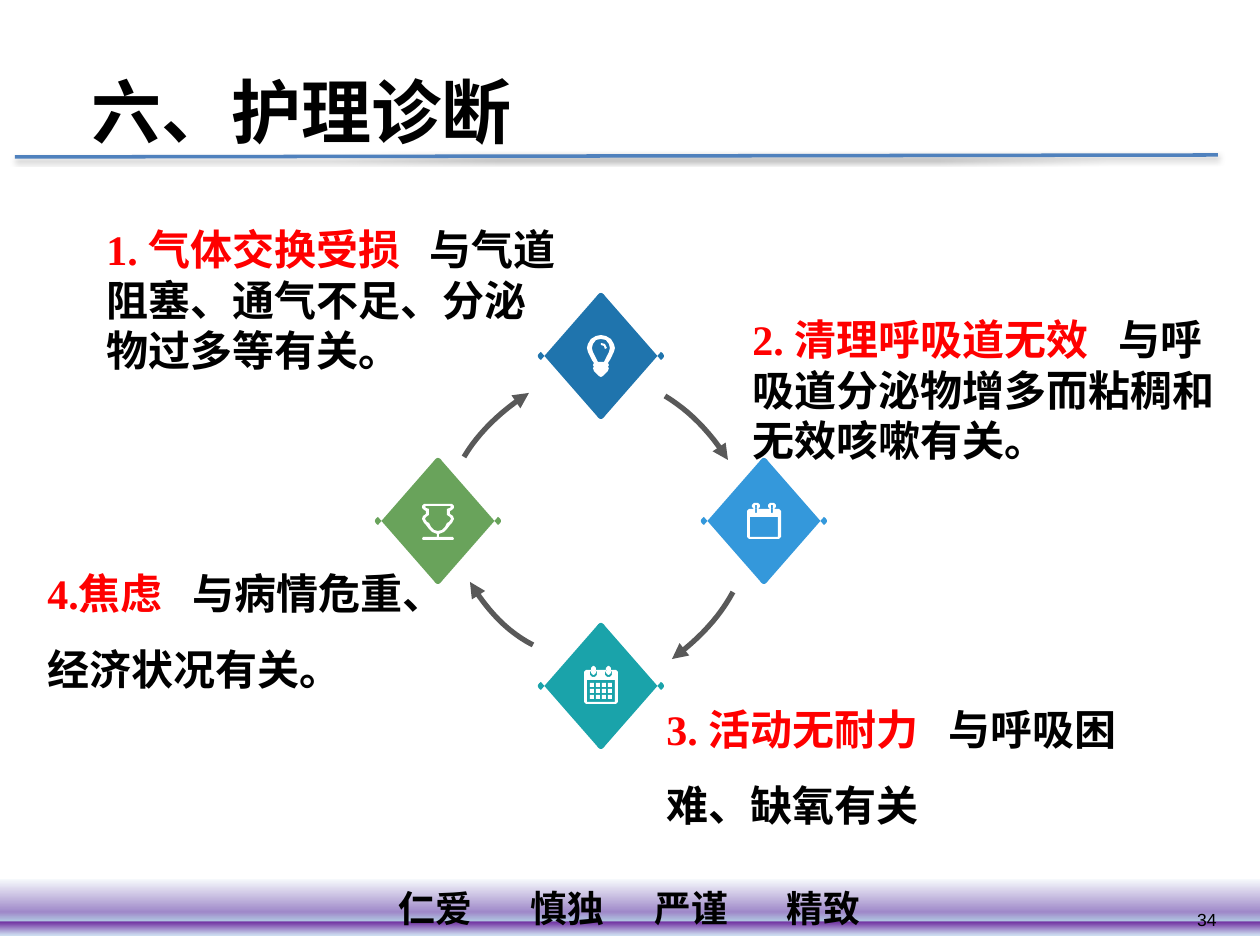
"""Build the nursing diagnosis slide: a four-step cycle with notes around it."""
from dataclasses import dataclass

from lxml.etree import SubElement
from pptx import Presentation
from pptx.dml.color import RGBColor
from pptx.enum.shapes import MSO_CONNECTOR as Connector, MSO_SHAPE as Preset
from pptx.enum.text import MSO_ANCHOR as Anchor, PP_ALIGN as Align
from pptx.oxml.ns import qn
from pptx.util import Emu, Pt

SCALE = 914400 / 126
BLACK = RGBColor(0x00, 0x00, 0x00)
WHITE = RGBColor(0xFF, 0xFF, 0xFF)
RED = RGBColor(0xFF, 0x00, 0x00)
GRAY = RGBColor(0x59, 0x59, 0x59)
RULE_BLUE = RGBColor(0x4F, 0x81, 0xBD)
NAVY = RGBColor(0x1F, 0x74, 0xAD)
SKY = RGBColor(0x34, 0x98, 0xDB)
TEAL = RGBColor(0x1A, 0xA3, 0xAA)
GREEN = RGBColor(0x69, 0xA3, 0x5B)
SERIF, CJK, SANS = "Times New Roman", "Noto Sans CJK SC", "Arial"
BAND_STOPS = [
    (0, "F6F9FC"), (58, "9F89C9"), (74, "B0C6E1"), (75, "7030A0"), (93, "B7B5DE"),
    (96, "C3CBE8"), (98, "C9D6ED"), (99, "CDDFF1"), (99, "CCDCF0"), (100, "CAD9EB"),
]
Point = tuple[float, float]
Contour = list[Point]


@dataclass
class Step:
    center: Point
    color: RGBColor
    icon: list[Contour]


@dataclass
class Note:
    box: tuple[int, int, int, int]
    name: str
    cause: str
    tab: int
    leading: float


def px(value: float) -> Emu:
    """Turn pixels into EMU."""
    return Emu(round(value * SCALE))


def curve(start: Point, control: Point, end: Point, count: int = 12) -> Contour:
    """Sample a quadratic curve."""
    steps = [i / count for i in range(count + 1)]
    return [tuple((1 - t) ** 2 * a + 2 * t * (1 - t) * b + t * t * c
                  for a, b, c in zip(start, control, end)) for t in steps]


def block(left: int, top: int, right: int, bottom: int, cut: int = 0) -> Contour:
    """Outline a rectangle with its corners cut."""
    return [(left + cut, top), (right - cut, top), (right, top + cut), (right, bottom - cut),
            (right - cut, bottom), (left + cut, bottom), (left, bottom - cut), (left, top + cut)]


def mirrored(half: Contour) -> Contour:
    """Complete a right half by its reflection."""
    return half + [(-x, y) for x, y in reversed(half)]


def diamond() -> Contour:
    """Outline a diamond with rounded tips."""
    return [point for x, y in [(0, 1), (1, 0), (0, -1), (-1, 0)]
            for point in curve((60 * x - 4 * y, 60 * y - 4 * x), (66 * x, 66 * y),
                               (60 * x + 4 * y, 60 * y + 4 * x))]


def draw_outline(slide, contours: list[Contour], center: Point = (0, 0), closed: bool = True):
    """Draw contours placed around a centre as one freeform."""
    placed = [[(px(x + center[0]), px(y + center[1])) for x, y in contour]
              for contour in contours]
    builder = slide.shapes.build_freeform(*placed[0][0], scale=1.0)
    for index, contour in enumerate(placed):
        if index:
            builder.move_to(*contour[0])
        builder.add_line_segments(contour[1:], close=closed)
    shape = builder.convert_to_shape()
    shape.shadow.inherit = False
    return shape


def draw_filled(slide, contours: list[Contour], center: Point, color: RGBColor) -> None:
    """Draw a filled freeform without a border."""
    shape = draw_outline(slide, contours, center)
    shape.fill.solid()
    shape.fill.fore_color.rgb = color
    shape.line.fill.background()


def draw_arrow(slide, tip: Point, middle: Point, end: Point) -> None:
    """Draw a curved arrow passing through its middle point."""
    control = tuple(2 * m - (a + b) / 2 for a, m, b in zip(tip, middle, end))
    shape = draw_outline(slide, [curve(tip, control, end)], closed=False)
    shape.fill.background()
    shape.line.color.rgb = GRAY
    shape.line.width = Pt(3)
    SubElement(shape.line._get_or_add_ln(), qn("a:headEnd"), type="triangle")


def add_tabs(para, stops: list[int]) -> None:
    """Add left tab stops to a paragraph."""
    tabs = SubElement(para._p.get_or_add_pPr(), qn("a:tabLst"))
    for stop in stops:
        SubElement(tabs, qn("a:tab"), pos=str(px(stop)), algn="l")


def add_span(para, text: str, **values) -> None:
    """Add a run with the given font values."""
    span = para.add_run()
    span.text = text
    span.font.color.rgb = values.pop("color", BLACK)
    for name, value in values.items():
        setattr(span.font, name, value)
    if values["name"] != SANS:
        SubElement(span._r.get_or_add_rPr(), qn("a:ea"), typeface=CJK)


def add_box(slide, area: tuple[int, int, int, int], **values):
    """Add a wrapping text box and return its frame."""
    frame = slide.shapes.add_textbox(*map(px, area)).text_frame
    for name, value in {"word_wrap": True, **values}.items():
        setattr(frame, name, value)
    return frame


def draw_band(slide) -> None:
    """Draw the gradient footer with its four mottoes."""
    band = slide.shapes.add_shape(Preset.RECTANGLE, 0, px(879), px(1260), px(57))
    band.shadow.inherit = False
    band.line.fill.background()
    band.fill.gradient()
    band.fill.gradient_angle = 270
    stops = band._element.spPr.find(".//" + qn("a:gsLst"))
    stops.clear()
    for position, color in BAND_STOPS:
        stop = SubElement(stops, qn("a:gs"), pos=str(position * 1000))
        SubElement(stop, qn("a:srgbClr"), val=color)
    frame = band.text_frame
    for name, value in {"margin_left": px(399), "margin_right": 0, "margin_top": 0,
                        "margin_bottom": 0, "vertical_anchor": Anchor.MIDDLE}.items():
        setattr(frame, name, value)
    para = frame.paragraphs[0]
    para.alignment = Align.LEFT
    add_tabs(para, [132, 256, 388])
    add_span(para, "仁爱\t慎独\t严谨\t精致", name=CJK, size=Pt(21), bold=True)


def draw_rule(slide) -> None:
    """Draw the shadowed line under the title."""
    rule = slide.shapes.add_connector(Connector.STRAIGHT, px(15), px(157), px(1218), px(155))
    rule.line.color.rgb = RULE_BLUE
    rule.line.width = Pt(2)
    effects = SubElement(rule._element.spPr, qn("a:effectLst"))
    shadow = SubElement(effects, qn("a:outerShdw"), blurRad=str(Pt(3.1)), dist=str(Pt(1.6)),
                        dir="5400000", rotWithShape="0")
    color = SubElement(shadow, qn("a:srgbClr"), val="000000")
    SubElement(color, qn("a:alpha"), val="38000")


def draw_note(slide, note: Note) -> None:
    """Write a diagnosis in red followed by its cause."""
    para = add_box(slide, note.box, margin_top=px(10)).paragraphs[0]
    add_tabs(para, [note.tab])
    para.line_spacing = Pt(note.leading)
    add_span(para, note.name, name=SERIF, size=Pt(24), bold=True, color=RED)
    add_span(para, "\t" + note.cause, name=SERIF, size=Pt(24), bold=True)


BULB = [
    mirrored([(0, -21), (5, -20), (10, -17), (13, -12), (14, -8), (13, -4), (11, 0), (9, 4),
              (7, 7), (8, 9), (7, 11), (8, 12), (7, 15), (4, 18), (2, 20), (0, 21)]),
    mirrored([(0, -17), (5, -16), (8, -12), (9, -8), (8, -4), (6, 0), (4, 4), (3, 6)]),
    [(0, -13), (4, -12), (6, -8), (4, -7), (3, -10), (0, -11)],
]
CUP = [
    mirrored([(0, -17), (14, -17), (16, -15), (16, -13), (14, -11), (12, -10), (12, -7),
              (15, -5), (16, -2), (14, 2), (12, 4), (9, 8), (6, 11), (1, 13), (1, 16),
              (15, 16), (16, 18), (15, 19), (0, 19)]),
    mirrored([(0, -15), (12, -15), (13, -14), (12, -13), (9, -12), (9, -6), (12, -4),
              (13, -2), (11, 1), (9, 2), (7, 6), (4, 9), (0, 10)]),
]
DAY = [block(-17, -12, 17, 18, 2), block(-14, -4, 14, 16)]
DAY += [block(x, -18, x + 8, -12, 2) for x in (-12, 4)]
DAY += [block(x, -16, x + 2, -8) for x in (-9, 7)]
MONTH = [block(-17, -16, 17, 18, 2), block(-14, -6, 14, 16)]
MONTH += [block(x, -16, x + 7, -9, 2) for x in (-11, 4)]
MONTH += [block(x, -20, x + 5, -11, 2) for x in (-10, 5)]
MONTH += [block(x, y, x + 4, y + 4) for y in (-3, 3, 9) for x in (-11, -5, 1, 7)]
STEPS = [Step((438, 521), GREEN, CUP), Step((764, 521), SKY, DAY),
         Step((601, 686), TEAL, MONTH), Step((601, 356), NAVY, BULB)]
ARROWS = [((529, 393), (491, 423), (464, 457)), ((672, 659), (708, 627), (733, 592)),
          ((728, 460), (699, 423), (665, 396)), ((470, 582), (499, 620), (533, 645))]
NOTES = [
    Note((94, 214, 479, 165), "1. 气体交换受损", "与气道阻塞、通气不足、分泌物过多等有关。", 323, 28.8),
    Note((740, 304, 488, 165), "2. 清理呼吸道无效", "与呼吸道分泌物增多而粘稠和无效咳嗽有关。", 366, 28.8),
    Note((654, 668, 486, 165), "3. 活动无耐力", "与呼吸困难、缺氧有关", 282, 43.3),
    Note((35, 532, 412, 165), "4.焦虑", "与病情危重、经济状况有关。", 145, 43.3),
]


def main() -> None:
    """Draw the slide and save the deck."""
    deck = Presentation()
    deck.slide_width, deck.slide_height = px(1260), px(945)
    slide = deck.slides.add_slide(deck.slide_layouts[6])
    draw_band(slide)
    number = add_box(slide, (935, 903, 294, 34), vertical_anchor=Anchor.MIDDLE).paragraphs[0]
    number.alignment = Align.RIGHT
    add_span(number, "34", name=SANS, size=Pt(10))
    draw_rule(slide)
    for step in STEPS:
        draw_filled(slide, [diamond()], step.center, step.color)
        draw_filled(slide, step.icon, step.center, WHITE)
    for arrow in ARROWS:
        draw_arrow(slide, *arrow)
    for note in NOTES:
        draw_note(slide, note)
    title = add_box(slide, (79, 55, 461, 97), word_wrap=False, margin_top=px(13)).paragraphs[0]
    title.line_spacing = Pt(48)
    add_span(title, "六、护理诊断", name=SERIF, size=Pt(40), bold=True)
    deck.save("out.pptx")


if __name__ == "__main__":
    main()
